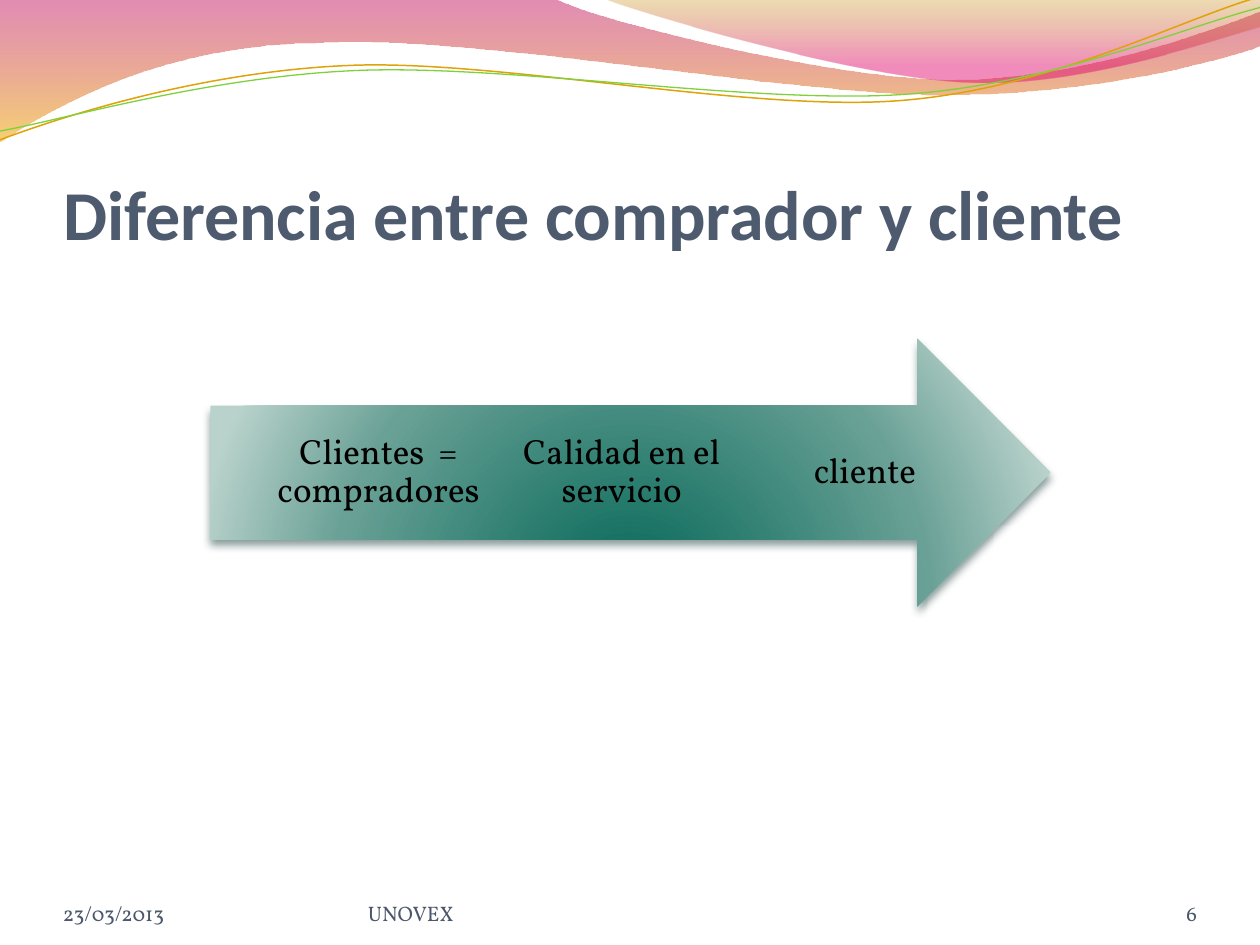
from lxml.etree import SubElement
from pptx import Presentation
from pptx.dml.color import RGBColor
from pptx.enum.shapes import MSO_SHAPE
from pptx.enum.text import MSO_ANCHOR, PP_ALIGN
from pptx.oxml import parse_xml
from pptx.oxml.ns import nsdecls, qn
from pptx.util import Inches, Pt

# Content
TITLE = "Diferencia entre comprador y cliente"
STAGES = ["Clientes  = compradores", "Calidad en el servicio", "cliente"]
FOOTER = [  # text, left, width, alignment
    ("23/03/2013", 0.5, 2.33, PP_ALIGN.LEFT),
    ("UNOVEX", 2.92, 3.67, PP_ALIGN.LEFT),
    ("6", 8.67, 0.83, PP_ALIGN.RIGHT),
]

# Waves: a two-number step is a line, a six-number step is a Bezier curve
LINEAR = '<a:lin ang="5400000" scaled="0"/>'
BANDS = [  # steps, gradient stops (position, colour, opacity)
    ([(0, -0.01), (4.4, -0.01), (4.76, 0.17, 6.64, 0.63, 7.58, 0.63),
      (8.53, 0.63, 9.58, 0.26, 10, 0.09), (10.01, 0.36),
      (9.83, 0.44, 8.7, 0.76, 7.46, 0.75), (6.22, 0.75, 3.82, 0.28, 2.57, 0.34),
      (1.29, 0.35, 0.46, 0.83, -0.01, 1.13)],
     [(0, "BD0059", 45), (100, "F0AB00", 55)]),
    ([(4.79, -0.01), (5.09, 0.11, 6.82, 0.62, 7.69, 0.65),
      (8.56, 0.69, 9.61, 0.32, 10, 0.21), (10, 0)],
     [(0, "C38B00", 30), (80, "E1006B", 45)]),
]
STRANDS = [  # steps, colour, width
    ([(0, 1.11), (0.48, 0.93, 1.58, 0.57, 2.77, 0.52),
      (3.95, 0.47, 5.93, 0.89, 7.13, 0.8), (8.33, 0.71, 9.38, 0.15, 9.98, -0.02)],
     "E0A209", 0.85),
    ([(0, 1.04), (0.47, 0.96, 1.64, 0.61, 2.83, 0.56),
      (4.03, 0.51, 5.97, 0.83, 7.17, 0.75), (8.36, 0.67, 9.41, 0.21, 10, 0.06)],
     "7FD13B", 0.75),
]
ARROW_STOPS = [(0, "006555", 100), (68, "6AA196", 100), (100, "B9D2CC", 100)]
RADIAL = ('<a:path path="circle"><a:fillToRect l="50000" t="130000" '
          'r="50000" b="-30000"/></a:path>')


def color(value):
    return RGBColor.from_string(value)


def box(*lengths):
    return [Inches(v) for v in lengths]


def add_wave(s, steps, close):
    """Outline the end points, then bend the curved steps."""
    ends = [box(*step[-2:]) for step in steps]
    builder = s.shapes.build_freeform(*ends[0])
    builder.add_line_segments(ends[1:], close=close)
    sp = builder.convert_to_shape()
    sp.shadow.inherit = False
    lines = list(sp._element.spPr.iter(qn("a:lnTo")))
    for line, step in zip(lines, steps[1:]):
        if len(step) == 6:
            line.tag = qn("a:cubicBezTo")
            for k in (0, 2):
                x, y = box(*step[k:k + 2])
                pt = parse_xml(f'<a:pt {nsdecls("a")} x="{x - sp.left}" y="{y - sp.top}"/>')
                line.insert(k // 2, pt)
    return sp


def fill_gradient(sp, stops, direction):
    sp.line.fill.background()
    sp.fill.background()
    gs = "".join(f'<a:gs pos="{pos * 1000}"><a:srgbClr val="{c}">'
                 f'<a:alpha val="{alpha * 1000}"/></a:srgbClr></a:gs>'
                 for pos, c, alpha in stops)
    grad = parse_xml(f'<a:gradFill {nsdecls("a")} rotWithShape="1">'
                     f'<a:gsLst>{gs}</a:gsLst>{direction}</a:gradFill>')
    pr = sp._element.spPr
    pr.replace(pr.find(qn("a:noFill")), grad)


def write(sp, text, size, font, c, align, anchor, insets, bold=False):
    tf = sp.text_frame
    tf.word_wrap = True
    tf.vertical_anchor = anchor
    tf.margin_left = tf.margin_right = 0
    tf.margin_top, tf.margin_bottom = box(*insets)
    p = tf.paragraphs[0]
    p.alignment = align
    r = p.add_run()
    r.text = text
    r.font.size, r.font.name, r.font.bold = Pt(size), font, bold
    r.font.color.rgb = color(c)
    return p


prs = Presentation()
prs.slide_width, prs.slide_height = box(10, 7.5)
s = prs.slides.add_slide(prs.slide_layouts[5])

# Wave header
for steps, stops in BANDS:
    fill_gradient(add_wave(s, steps, True), stops, LINEAR)
for steps, c, width in STRANDS:
    strand = add_wave(s, steps, False)
    strand.fill.background()
    strand.line.color.rgb = color(c)
    strand.line.width = Pt(width)

# Title
title = s.shapes.title
title.left, title.top, title.width, title.height = box(0.5, 0.77, 9, 1.25)
write(title, TITLE, 40, "Calibri", "4E5B6F", PP_ALIGN.LEFT, MSO_ANCHOR.BOTTOM,
      (0.05, 0), bold=True)

# Arrow with a soft shadow
arrow = s.shapes.add_shape(MSO_SHAPE.RIGHT_ARROW, *box(1.67, 2.69, 6.67, 2.12))
fill_gradient(arrow, ARROW_STOPS, RADIAL)
arrow.shadow.inherit = False
shadow = SubElement(arrow._element.spPr.find(qn("a:effectLst")), qn("a:outerShdw"),
                    blurRad=str(Pt(4.5)), dist=str(Pt(3)), dir="5400000", rotWithShape="0")
tint = SubElement(shadow, qn("a:srgbClr"), val="062F2A")
SubElement(tint, qn("a:alpha"), val="48000")

# Stages inside the arrow
for i, text in enumerate(STAGES):
    tb = s.shapes.add_textbox(*box(2.2 + 1.93 * i, 3.22, 1.61, 1.06))
    p = write(tb, text, 20, "Vollkorn", "000000", PP_ALIGN.CENTER, MSO_ANCHOR.MIDDLE,
              (0.22, 0.22))
    p.line_spacing = 0.9

# Footer
for text, left, width, align in FOOTER:
    tb = s.shapes.add_textbox(*box(left, 6.95, width, 0.4))
    write(tb, text, 12, "Vollkorn", "4B576A", align, MSO_ANCHOR.BOTTOM, (0, 0))

prs.save("out.pptx")
